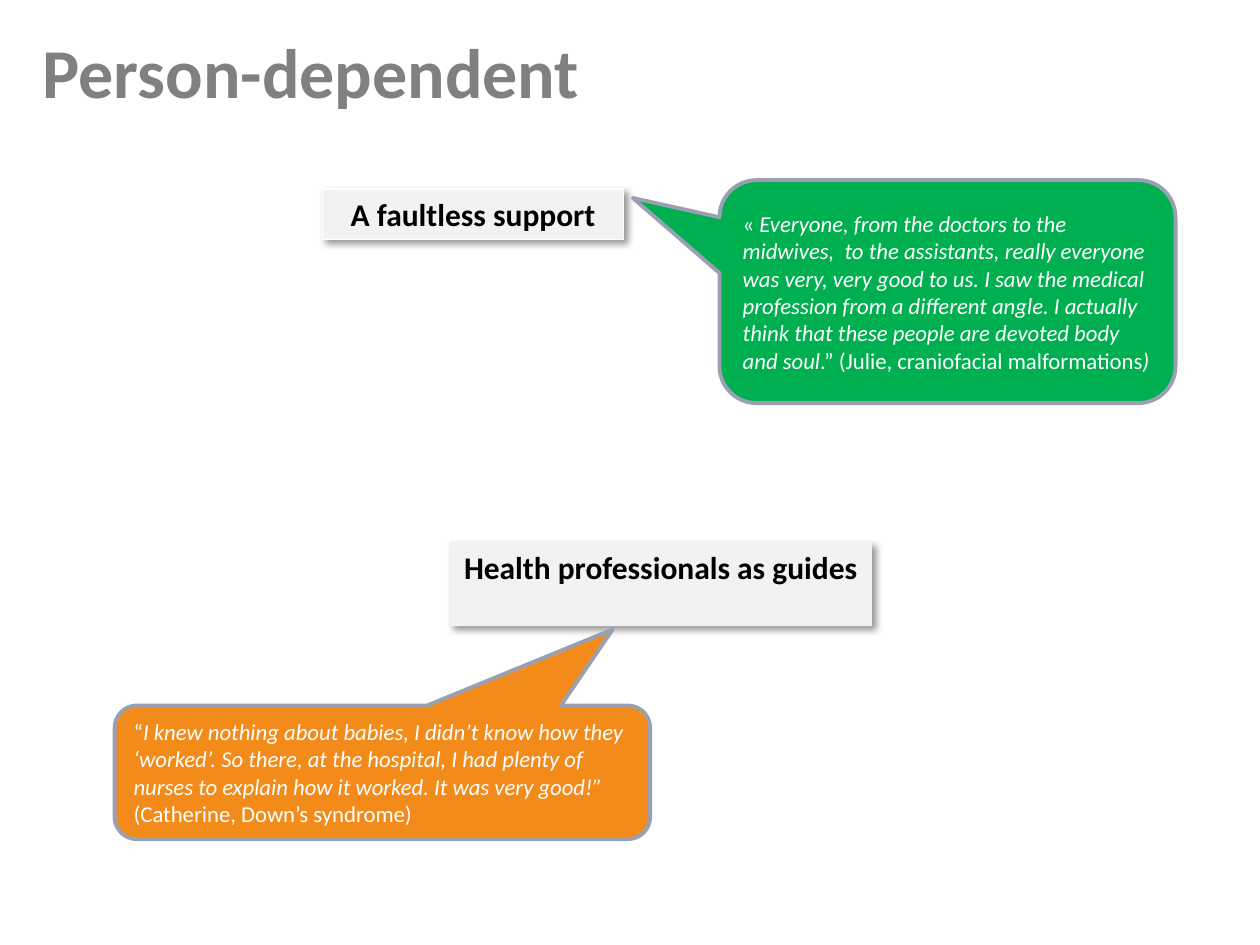
from lxml.etree import SubElement
from pptx import Presentation
from pptx.dml.color import RGBColor
from pptx.enum.shapes import MSO_SHAPE
from pptx.enum.text import MSO_ANCHOR, PP_ALIGN
from pptx.oxml.ns import qn
from pptx.util import Inches, Pt

# Grid: 100 columns by 75 rows of square cells
CELL = 0.1
COLUMNS, ROWS = 100, 75
FONT = "Calibri"
LABEL_FILL, WHITE, BLACK = "F2F2F2", "FFFFFF", "000000"
CALLOUT_LINE, TITLE_GREY = "98A0B2", "808080"
GREEN, ORANGE = "00B050", "F28B1A"


def cells(*counts):
    return [Inches(count * CELL) for count in counts]


def paint(color_format, color):
    color_format.rgb = RGBColor.from_string(color)


def style(run, size, color, bold=False, italic=False):
    font = run.font
    font.name, font.size = FONT, Pt(size)
    font.bold, font.italic = bold, italic
    paint(font.color, color)


def add_color(parent, color):
    return SubElement(parent, qn("a:srgbClr"), val=color)


def add_shadow(shape):
    """Soft grey shadow falling to the lower right."""
    effects = SubElement(shape._element.spPr, qn("a:effectLst"))
    shadow = SubElement(effects, qn("a:outerShdw"), blurRad=str(Pt(4)),
                        dist=str(Pt(3)), dir="2700000", algn="tl",
                        rotWithShape="0")
    SubElement(add_color(shadow, BLACK), qn("a:alpha"), val="40000")


def add_title(slide, text, place):
    title = slide.shapes.add_textbox(*cells(*place))
    title.text_frame.word_wrap = True
    title.text_frame.text = text
    run = title.text_frame.paragraphs[0].runs[0]
    style(run, 40, TITLE_GREY, bold=True)
    # Thin white outline around the letters
    properties = run.font._element
    outline = SubElement(properties, qn("a:ln"), w=str(Pt(1.1)))
    add_color(SubElement(outline, qn("a:solidFill")), WHITE)
    properties.insert(0, outline)


def add_label(slide, text, place, border=None, wrap=True):
    label = slide.shapes.add_shape(MSO_SHAPE.RECTANGLE, *cells(*place))
    label.fill.solid()
    paint(label.fill.fore_color, LABEL_FILL)
    if border:
        label.line.width = Pt(0.75)
        paint(label.line.color, border)
    else:
        label.line.fill.background()
    add_shadow(label)
    frame = label.text_frame
    frame.word_wrap, frame.vertical_anchor = wrap, MSO_ANCHOR.TOP
    frame.text = text
    frame.paragraphs[0].alignment = PP_ALIGN.CENTER
    style(frame.paragraphs[0].runs[0], 18, BLACK, bold=True)


def add_quote(slide, parts, place, pointer, color):
    """Speech callout; parts alternate between upright and italic."""
    quote = slide.shapes.add_shape(MSO_SHAPE.ROUNDED_RECTANGULAR_CALLOUT,
                                   *cells(*place))
    quote.shadow.inherit = False
    quote.adjustments[0], quote.adjustments[1] = pointer
    quote.fill.solid()
    paint(quote.fill.fore_color, color)
    quote.line.width = Pt(2.22)
    paint(quote.line.color, CALLOUT_LINE)
    frame = quote.text_frame
    frame.word_wrap, frame.vertical_anchor = True, MSO_ANCHOR.MIDDLE
    paragraph = frame.paragraphs[0]
    paragraph.alignment = PP_ALIGN.LEFT
    for index, part in enumerate(parts):
        run = paragraph.add_run()
        run.text = part
        style(run, 13, WHITE, italic=index % 2 == 1)


def main():
    presentation = Presentation()
    presentation.slide_width, presentation.slide_height = cells(COLUMNS, ROWS)
    slide = presentation.slides.add_slide(presentation.slide_layouts[6])

    # Guides: label and the mother's quote below it
    add_label(slide, "Health professionals as guides",
              (35.7, 43, 33.5, 6.7), wrap=False)
    add_label(slide, "A faultless support", (25.6, 15, 23.9, 4), border=WHITE)
    add_quote(slide, [
        "“",
        "I knew nothing about babies, I didn’t know how they ‘worked’. "
        "So there, at the hospital, I had plenty of nurses to explain how "
        "it worked. It was very good!” ",
        "(Catherine, Down’s syndrome)",
    ], (9.1, 56, 42.5, 10.6), (0.43, -1.07), ORANGE)

    # Heading
    add_title(slide, "Person-dependent", (2.4, 1.8, COLUMNS, 12.5))

    # Support: quote to the right of its label
    add_quote(slide, [
        "« ",
        "Everyone, from the doctors to the midwives,  to the assistants, "
        "really everyone was very, very good to us. I saw the medical "
        "profession from a different angle. I actually think that these "
        "people are devoted body and soul",
        ".” (Julie, craniofacial malformations",
        ")",
    ], (57.1, 14.3, 36.2, 17.7), (-0.69, -0.42), GREEN)

    presentation.save("out.pptx")


if __name__ == "__main__":
    main()
